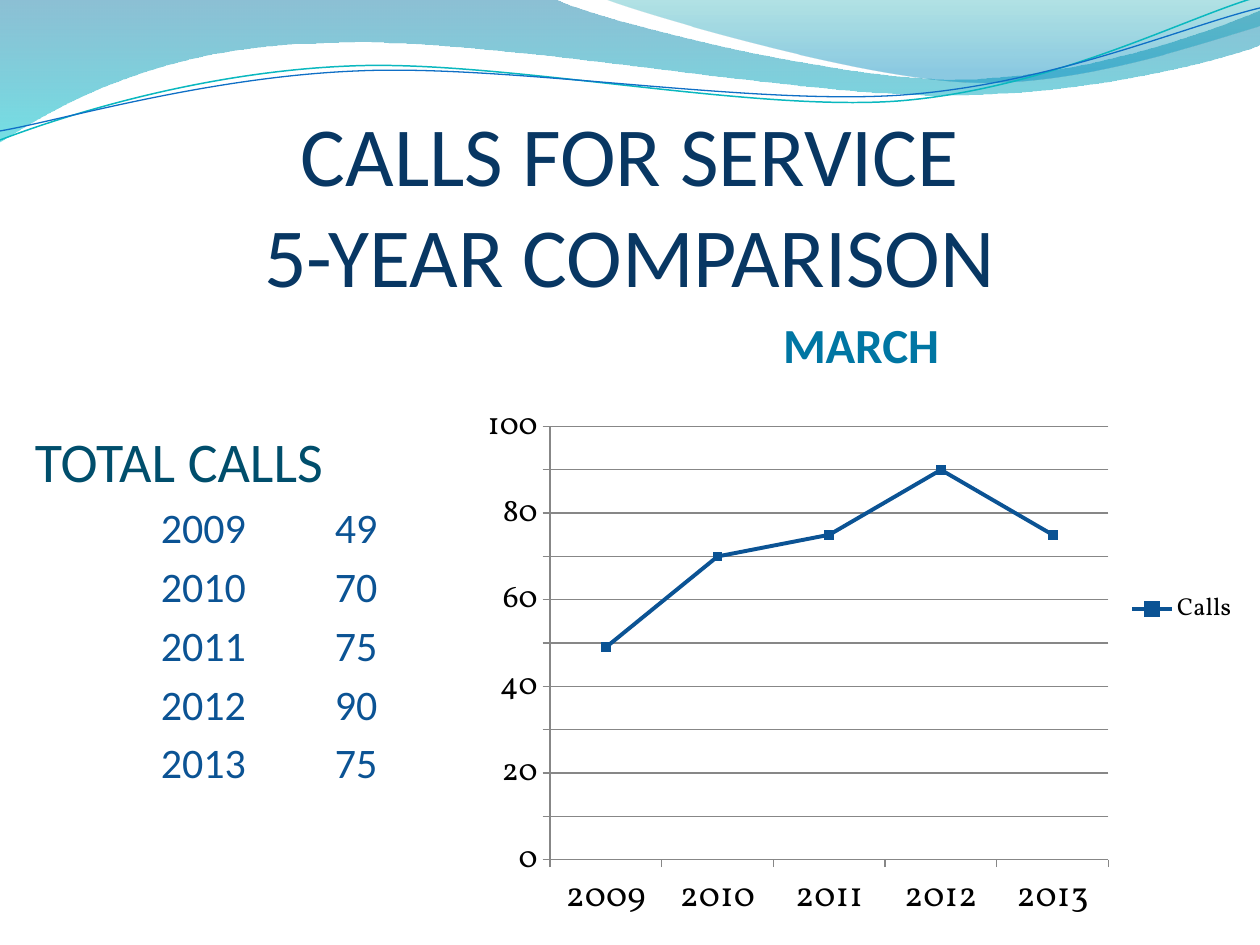
import lxml.etree
import pptx
import pptx.chart.data
import pptx.dml.color
import pptx.enum.chart
import pptx.enum.text
import pptx.oxml
import pptx.oxml.ns
import pptx.util

RGB = pptx.dml.color.RGBColor
NAVY = RGB(0x08, 0x37, 0x63)
DEEP_TEAL = RGB(0x00, 0x4E, 0x6C)
BLUE = RGB(0x0B, 0x53, 0x94)
HEADING_BLUE = RGB(0x00, 0x76, 0xA3)
WAVE_BLUE = RGB(0x00, 0x74, 0xA1)
WAVE_CYAN = RGB(0x00, 0xC6, 0xCF)
CREST_TEAL = RGB(0x00, 0xA1, 0xA9)
CREST_BLUE = RGB(0x00, 0x8B, 0xBF)
TEAL_STROKE = RGB(0x0A, 0xB8, 0xBF)
BLUE_STROKE = RGB(0x0F, 0x6F, 0xC6)
BLACK = RGB(0, 0, 0)

CALLS = {"2009": 49, "2010": 70, "2011": 75, "2012": 90, "2013": 75}
Pt = pptx.util.Pt
qn = pptx.oxml.ns.qn


def px(length):
    return round(length * 914400 / 126)


def format_font(font, size, color, name, bold=False):
    font.size, font.name, font.bold = Pt(size), name, bold
    font.color.rgb = color


def add_text(paragraph, text, *, size, color, name="Calibri", align=None, before=0, tabs=()):
    paragraph.text = text
    paragraph.alignment = align
    paragraph.space_before = Pt(before)
    for run in paragraph.runs:
        format_font(run.font, size, color, name)
    if tabs:
        properties = paragraph._p.get_or_add_pPr()
        stops = lxml.etree.SubElement(properties, qn("a:tabLst"))
        for stop in tabs:
            lxml.etree.SubElement(stops, qn("a:tab"), pos=str(px(stop)), algn="l")


class Deck:
    chart_font = "Vollkorn"

    def __init__(self):
        self.presentation = pptx.Presentation()
        self.presentation.slide_width = px(1260)
        self.presentation.slide_height = px(945)
        self.slide = self.presentation.slides.add_slide(self.presentation.slide_layouts[6])

    def outline(self, start, segments, closed):
        points = [(px(x), px(y)) for segment in segments for x, y in segment]
        builder = self.slide.shapes.build_freeform(px(start[0]), px(start[1]), scale=1.0)
        builder.add_line_segments(points, close=closed)
        shape = builder.convert_to_shape()
        shape.shadow.inherit = False
        straight = iter(list(shape._element.iter(qn("a:lnTo"))))
        for segment in segments:
            edges = [next(straight) for point in segment]
            if len(edges) == 3:
                curve = lxml.etree.Element(qn("a:cubicBezTo"))
                edges[0].addprevious(curve)
                for edge in edges:
                    curve.append(edge[0])
                    edge.getparent().remove(edge)
        return shape

    def wave(self, start, segments, stops):
        shape = self.outline(start, segments, True)
        shape.line.fill.background()
        shape.fill.gradient()
        gradient = shape._element.spPr.find(qn("a:gradFill"))
        stop_xml = "".join(
            f'<a:gs pos="{position * 1000}"><a:srgbClr val="{color}">'
            f'<a:alpha val="{opacity * 1000}"/></a:srgbClr></a:gs>'
            for position, color, opacity in stops)
        gradient.getparent().replace(gradient, pptx.oxml.parse_xml(
            f'<a:gradFill {pptx.oxml.ns.nsdecls("a")} rotWithShape="1"><a:gsLst>{stop_xml}'
            '</a:gsLst><a:lin ang="5400000" scaled="0"/></a:gradFill>'))

    def stroke(self, start, segments, color, width):
        shape = self.outline(start, segments, False)
        shape.fill.background()
        shape.line.color.rgb = color
        shape.line.width = Pt(width)

    def text_box(self, left, top, width, height, inset=0, anchor="TOP"):
        frame = self.slide.shapes.add_textbox(*map(px, (left, top, width, height))).text_frame
        frame.word_wrap = True
        frame.margin_left = px(inset)
        frame.margin_right = 0
        frame.vertical_anchor = pptx.enum.text.MSO_ANCHOR[anchor]
        return frame

    def line_chart(self, left, top, width, height, title, series_name, values):
        data = pptx.chart.data.CategoryChartData()
        data.categories = list(values)
        data.add_series(series_name, list(values.values()))
        chart = self.slide.shapes.add_chart(
            pptx.enum.chart.XL_CHART_TYPE.LINE_MARKERS,
            *map(px, (left, top, width, height)), data).chart
        format_font(chart.font, 10, BLACK, self.chart_font)
        chart.has_title = True
        heading = chart.chart_title.text_frame
        heading.text = title
        format_font(heading.paragraphs[0].runs[0].font, 28, HEADING_BLUE, "Calibri", True)
        chart.has_legend = True
        chart.legend.position = pptx.enum.chart.XL_LEGEND_POSITION.RIGHT
        chart.legend.include_in_layout = False
        format_font(chart.legend.font, 14, BLACK, self.chart_font)
        for axis, size in ((chart.category_axis, 20), (chart.value_axis, 18)):
            axis.major_tick_mark = pptx.enum.chart.XL_TICK_MARK.OUTSIDE
            format_font(axis.tick_labels.font, size, BLACK, self.chart_font)
        scale = chart.value_axis
        scale.minimum_scale, scale.maximum_scale, scale.major_unit = 0, 100, 10
        scale.has_major_gridlines = True
        plot = chart.plots[0]
        plot.vary_by_categories = False
        series = plot.series[0]
        series.smooth = False
        series.format.line.color.rgb = BLUE
        series.format.line.width = Pt(2.25)
        series.marker.style = pptx.enum.chart.XL_MARKER_STYLE.SQUARE
        series.marker.size = 5
        series.marker.format.fill.solid()
        series.marker.format.fill.fore_color.rgb = BLUE
        series.marker.format.line.color.rgb = BLUE


def main():
    deck = Deck()
    deck.wave((0, 0), [
        [(554, -1)],
        ((600, 21), (837, 79), (955, 79)),
        ((1075, 79), (1207, 33), (1260, 11)),
        [(1261, 45)],
        ((1237, 55), (1096, 96), (940, 95)),
        ((784, 95), (481, 35), (324, 43)),
        ((163, 45), (58, 105), (-1, 142)),
    ], [(0, WAVE_BLUE, 45), (100, WAVE_CYAN, 55)])
    deck.wave((604, -1), [
        ((641, 14), (859, 78), (969, 82)),
        ((1079, 87), (1211, 40), (1260, 26)),
        [(1260, 0)],
    ], [(0, CREST_TEAL, 30), (80, CREST_BLUE, 45)])
    deck.stroke((0, 140), [
        ((60, 117), (199, 72), (349, 66)),
        ((498, 59), (747, 112), (898, 101)),
        ((1050, 89), (1182, 19), (1257, -3)),
    ], TEAL_STROKE, 0.85)
    deck.stroke((0, 131), [
        ((59, 121), (207, 77), (357, 71)),
        ((508, 64), (752, 106), (903, 95)),
        ((1053, 84), (1185, 26), (1260, 8)),
    ], BLUE_STROKE, 0.75)

    title = deck.text_box(63, 147, 1134, 157, anchor="BOTTOM")
    title.margin_bottom = 0
    add_text(title.paragraphs[0], "CALLS FOR SERVICE\v5-YEAR COMPARISON", size=48,
             color=NAVY, align=pptx.enum.text.PP_ALIGN.CENTER)

    totals = deck.text_box(-31, 420, 494, 513, inset=66)
    add_text(totals.paragraphs[0], "TOTAL CALLS", size=32, color=DEEP_TEAL, before=6.4)
    for year, count in CALLS.items():
        add_text(totals.add_paragraph(), f"\t{year}\t{count}", size=24, color=BLUE,
                 before=4.8, tabs=(126, 300))

    deck.line_chart(472, 283, 778, 652, "MARCH", "Calls", CALLS)
    deck.presentation.save("out.pptx")


if __name__ == "__main__":
    main()
